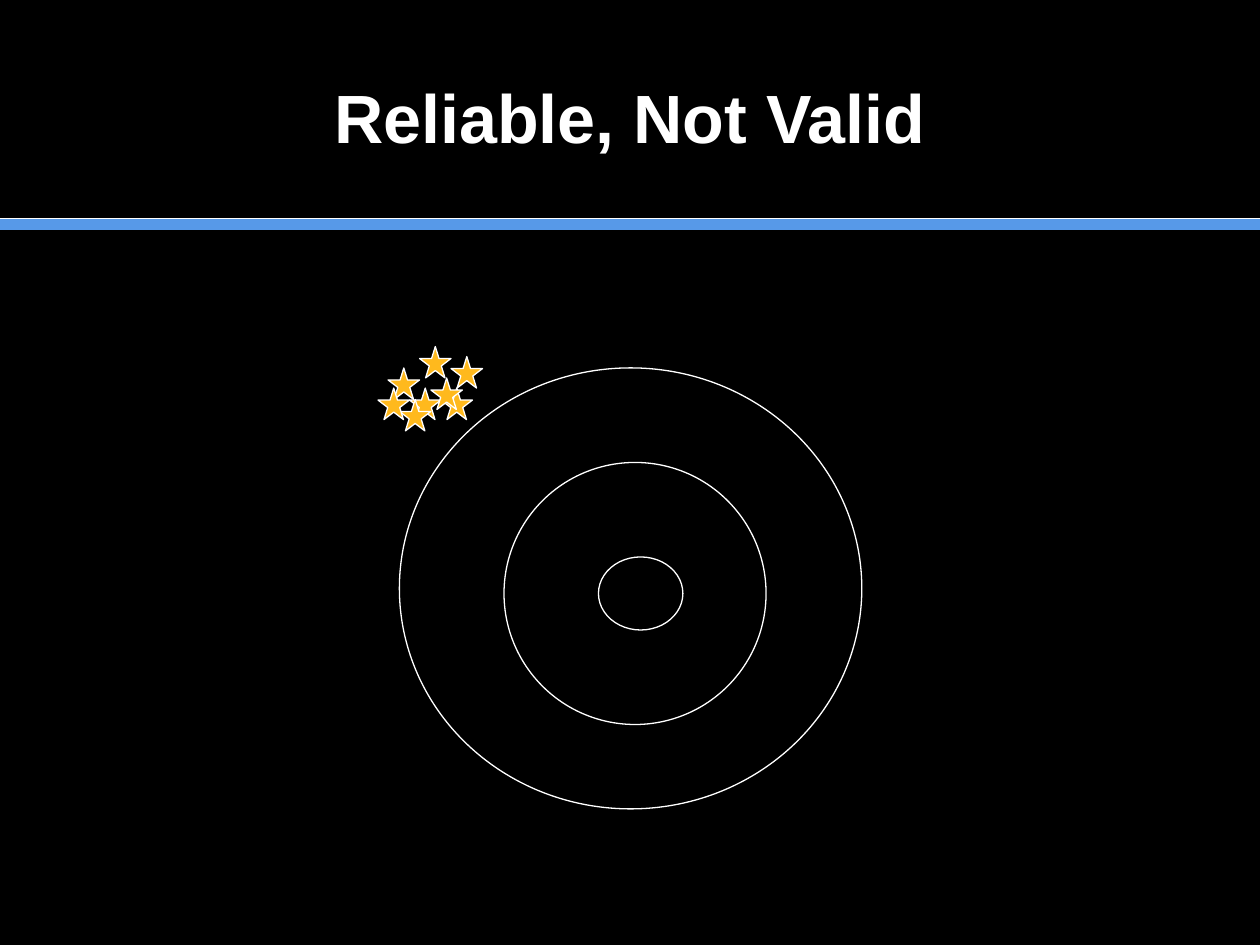
from dataclasses import dataclass

from lxml import etree
from pptx import Presentation
from pptx.dml.color import RGBColor
from pptx.enum.shapes import MSO_CONNECTOR, MSO_SHAPE
from pptx.enum.text import MSO_ANCHOR, MSO_AUTO_SIZE, PP_ALIGN
from pptx.oxml.ns import qn
from pptx.util import Inches, Pt

OVAL = MSO_SHAPE.OVAL
STAR = MSO_SHAPE.STAR_5_POINT
LINE = MSO_CONNECTOR.STRAIGHT
MIDDLE = MSO_ANCHOR.MIDDLE
CENTER = PP_ALIGN.CENTER
FIXED = MSO_AUTO_SIZE.NONE

BLACK, WHITE, BLUE, GOLD = "000000", "FFFFFF", "5799E8", "FFB91D"
WIDTH, HEIGHT = 10, 7.5
STAR_SIZE = 0.25


@dataclass
class Rule:
    y: float
    color: str
    weight: float


@dataclass
class Mark:
    kind: MSO_SHAPE
    left: float
    top: float
    width: float
    height: float
    fill: str | None = None


RULES = [Rule(1.78, BLUE, 7), Rule(1.73, WHITE, 0.5)]
RINGS = [
    Mark(OVAL, 3.17, 2.92, 3.67, 3.5),
    Mark(OVAL, 4, 3.67, 2.08, 2.08),
    Mark(OVAL, 4.75, 4.42, 0.67, 0.58),
]
HITS = [
    (3.08, 2.92), (3.25, 3.08), (3.5, 3.08), (3.17, 3.17),
    (3.58, 2.83), (3, 3.08), (3.42, 3), (3.33, 2.75),
]
STARS = [Mark(STAR, x, y, STAR_SIZE, STAR_SIZE, GOLD) for x, y in HITS]


def paint(fill, color: str) -> None:
    fill.solid()
    fill.fore_color.rgb = RGBColor.from_string(color)


def stroke(line, color: str, weight: float) -> None:
    paint(line.fill, color)
    line.width = Pt(weight)


def draw_rule(slide, rule: Rule) -> None:
    y = Inches(rule.y)
    line = slide.shapes.add_connector(LINE, 0, y, Inches(WIDTH), y)
    stroke(line.line, rule.color, rule.weight)
    etree.SubElement(line._element.spPr, qn("a:effectLst"))


def draw_mark(slide, mark: Mark) -> None:
    box = [Inches(n) for n in (mark.left, mark.top, mark.width, mark.height)]
    shape = slide.shapes.add_shape(mark.kind, *box)
    shape.shadow.inherit = False
    stroke(shape.line, WHITE, 0.75)
    if mark.fill:
        paint(shape.fill, mark.fill)
    else:
        shape.fill.background()


def set_title(slide, text: str) -> None:
    title = slide.shapes.title
    place = {"left": 0.5, "top": 0.3, "width": 9, "height": 1.25}
    for name, value in place.items():
        setattr(title, name, Inches(value))
    frame = title.text_frame
    frame.text = text
    frame.auto_size = FIXED
    frame.vertical_anchor = MIDDLE
    para = frame.paragraphs[0]
    para.alignment = CENTER
    font = para.runs[0].font
    for name, value in {"name": "Arial", "size": Pt(39), "bold": True}.items():
        setattr(font, name, value)
    paint(font.fill, WHITE)


def main() -> None:
    deck = Presentation()
    deck.slide_width, deck.slide_height = Inches(WIDTH), Inches(HEIGHT)
    slide = deck.slides.add_slide(deck.slide_layouts.get_by_name("Title Only"))
    paint(slide.background.fill, BLACK)
    for rule in RULES:
        draw_rule(slide, rule)
    set_title(slide, "Reliable, Not Valid")
    for mark in RINGS + STARS:
        draw_mark(slide, mark)
    deck.save("out.pptx")


if __name__ == "__main__":
    main()
